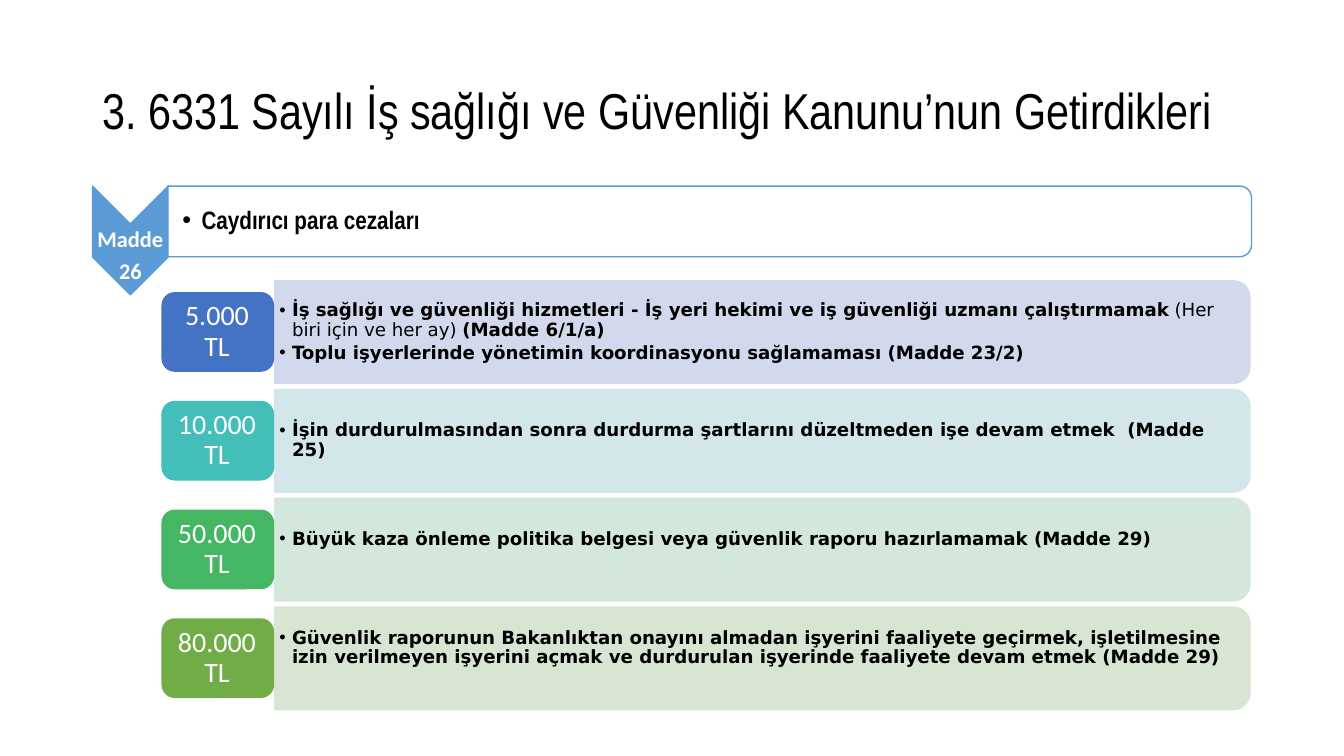
from lxml import etree
from pptx import Presentation
from pptx import util as u
from pptx.dml.color import RGBColor
from pptx.enum import shapes, text
from pptx.oxml.ns import qn

BLACK = RGBColor(0x00, 0x00, 0x00)
WHITE = RGBColor(0xFF, 0xFF, 0xFF)
SKY = RGBColor(0x5B, 0x9B, 0xD5)
BLUE = RGBColor(0x44, 0x72, 0xC4)
PALE_BLUE = RGBColor(0xCF, 0xD5, 0xEA)
TEAL = RGBColor(0x43, 0xBE, 0xB9)
PALE_TEAL = RGBColor(0xCF, 0xE5, 0xE8)
GREEN = RGBColor(0x45, 0xB6, 0x64)
PALE_GREEN = RGBColor(0xCF, 0xE5, 0xD8)
OLIVE = RGBColor(0x70, 0xAD, 0x47)
PALE_OLIVE = RGBColor(0xD5, 0xE3, 0xCF)

ROW_TOP = 7.06
ROW_PITCH = 2.74

FINES = [
    ("5.000 TL", BLUE, PALE_BLUE, 0.08, [
        [("İş sağlığı ve güvenliği hizmetleri - İş yeri hekimi ve iş güvenliği "
          "uzmanı çalıştırmamak ", True),
         ("(Her biri için ve her ay) ", False),
         ("(Madde 6/1/a)", True)],
        [("Toplu işyerlerinde yönetimin koordinasyonu sağlamaması (Madde 23/2)", True)],
    ]),
    ("10.000 TL", TEAL, PALE_TEAL, 0.08, [
        [("İşin durdurulmasından sonra durdurma şartlarını düzeltmeden işe devam "
          "etmek  (Madde 25)", True)],
    ]),
    ("50.000 TL", GREEN, PALE_GREEN, 0.6, [
        [("Büyük kaza önleme politika belgesi veya güvenlik raporu hazırlamamak "
          "(Madde 29)", True)],
    ]),
    ("80.000 TL", OLIVE, PALE_OLIVE, 0.6, [
        [("Güvenlik raporunun Bakanlıktan onayını almadan işyerini faaliyete "
          "geçirmek, işletilmesine izin verilmeyen işyerini açmak ve durdurulan "
          "işyerinde faaliyete devam etmek (Madde 29)", True)],
    ]),
]


def add_block(page, kind, left, top, width, height, fill, line=None):
    block = page.shapes.add_shape(kind, u.Cm(left), u.Cm(top), u.Cm(width), u.Cm(height))
    block.shadow.inherit = False
    block.fill.solid()
    block.fill.fore_color.rgb = fill
    if line is None:
        block.line.fill.background()
    else:
        block.line.color.rgb = line
        block.line.width = u.Pt(1)
    return block


def add_turned(page, kind, left, top, width, height, fill, line=None):
    shift = (width - height) / 2
    block = add_block(page, kind, left + shift, top - shift, height, width, fill, line)
    block.rotation = 90
    return block


def add_band(page, left, top, width, height, fill, line=None):
    band = add_turned(page, shapes.MSO_SHAPE.ROUND_2_SAME_RECTANGLE,
                      left, top, width, height, fill, line)
    color = band.fill._xPr.find(qn("a:solidFill"))[0]
    etree.SubElement(color, qn("a:alpha"), val="90000")


def set_frame(frame, left, top, right, bottom):
    frame.word_wrap = True
    frame.vertical_anchor = text.MSO_ANCHOR.MIDDLE
    frame.margin_left, frame.margin_top = u.Cm(left), u.Cm(top)
    frame.margin_right, frame.margin_bottom = u.Cm(right), u.Cm(bottom)


def add_text(page, left, top, width, height, insets):
    box = page.shapes.add_textbox(u.Cm(left), u.Cm(top), u.Cm(width), u.Cm(height))
    set_frame(box.text_frame, *insets)
    return box.text_frame


def style(para, name, size, color, after, align=text.PP_ALIGN.LEFT, bold=None):
    para.alignment = align
    para.line_spacing = 0.9
    para.space_after = u.Pt(after)
    para.font.name = name
    para.font.size = u.Pt(size)
    para.font.color.rgb = color
    para.font.bold = bold


def add_bullet(para, indent):
    props = para._p.get_or_add_pPr()
    props.set("marL", str(u.Cm(indent)))
    props.set("indent", str(-u.Cm(indent)))
    etree.SubElement(props, qn("a:buFont"), typeface="Arial")
    etree.SubElement(props, qn("a:buChar"), char="•")


def fill_lines(frame, lines):
    frame.text = "\n".join(lines)
    return frame.paragraphs


def add_title(page):
    title = page.shapes.title
    title.left, title.top = u.Cm(2.33), u.Cm(1.01)
    title.width, title.height = u.Cm(29.21), u.Cm(3.68)
    frame = title.text_frame
    set_frame(frame, 0.25, 0.13, 0.25, 0.13)
    frame.auto_size = text.MSO_AUTO_SIZE.NONE
    para, = fill_lines(frame, ["3. 6331 Sayılı İş sağlığı ve Güvenliği Kanunu’nun Getirdikleri"])
    style(para, "Arial Narrow", 36, BLACK, 0)


def add_article(page):
    add_turned(page, shapes.MSO_SHAPE.CHEVRON, 2.33, 4.69, 1.91, 2.74, SKY, SKY)
    label = add_text(page, 2.33, 6.06, 1.91, 0.81, [0.02] * 4)
    for para in fill_lines(label, ["Madde", "26"]):
        style(para, "Calibri", 16, WHITE, 5.6, text.PP_ALIGN.CENTER, True)
    add_band(page, 4.23, 4.69, 27.31, 1.78, WHITE, SKY)
    heading = add_text(page, 4.24, 4.78, 27.2, 1.6, [0.36, 0.02, 0.02, 0.02])
    para, = fill_lines(heading, ["Caydırıcı para cezaları"])
    add_bullet(para, 0.48)
    style(para, "Arial Narrow", 18, BLACK, 2.7, bold=True)


def add_fine(page, top, amount, color, pale, bottom_inset, offences):
    add_band(page, 6.91, top, 24.61, 2.62, pale)
    frame = add_text(page, 6.91, top + 0.13, 24.49, 2.36, [0.13, 0.08, 0.13, bottom_inset])
    for number, offence in enumerate(offences):
        para = frame.add_paragraph() if number else frame.paragraphs[0]
        add_bullet(para, 0.32)
        style(para, "DejaVu Sans", 13, BLACK, 2)
        for words, bold in offence:
            span = para.add_run()
            span.text = words
            span.font.bold = bold
    badge = add_block(page, shapes.MSO_SHAPE.ROUNDED_RECTANGLE,
                      4.07, top + 0.3, 2.84, 2.01, color)
    set_frame(badge.text_frame, 0.18, 0.1, 0.22, 0.1)
    para, = fill_lines(badge.text_frame, [amount])
    style(para, "Calibri", 20, WHITE, 7, text.PP_ALIGN.CENTER)


def main():
    deck = Presentation()
    deck.slide_width, deck.slide_height = u.Cm(33.87), u.Cm(19.05)
    page = deck.slides.add_slide(deck.slide_layouts[5])
    add_title(page)
    add_article(page)
    for row, fine in enumerate(FINES):
        add_fine(page, ROW_TOP + row * ROW_PITCH, *fine)
    deck.save("out.pptx")


if __name__ == "__main__":
    main()
